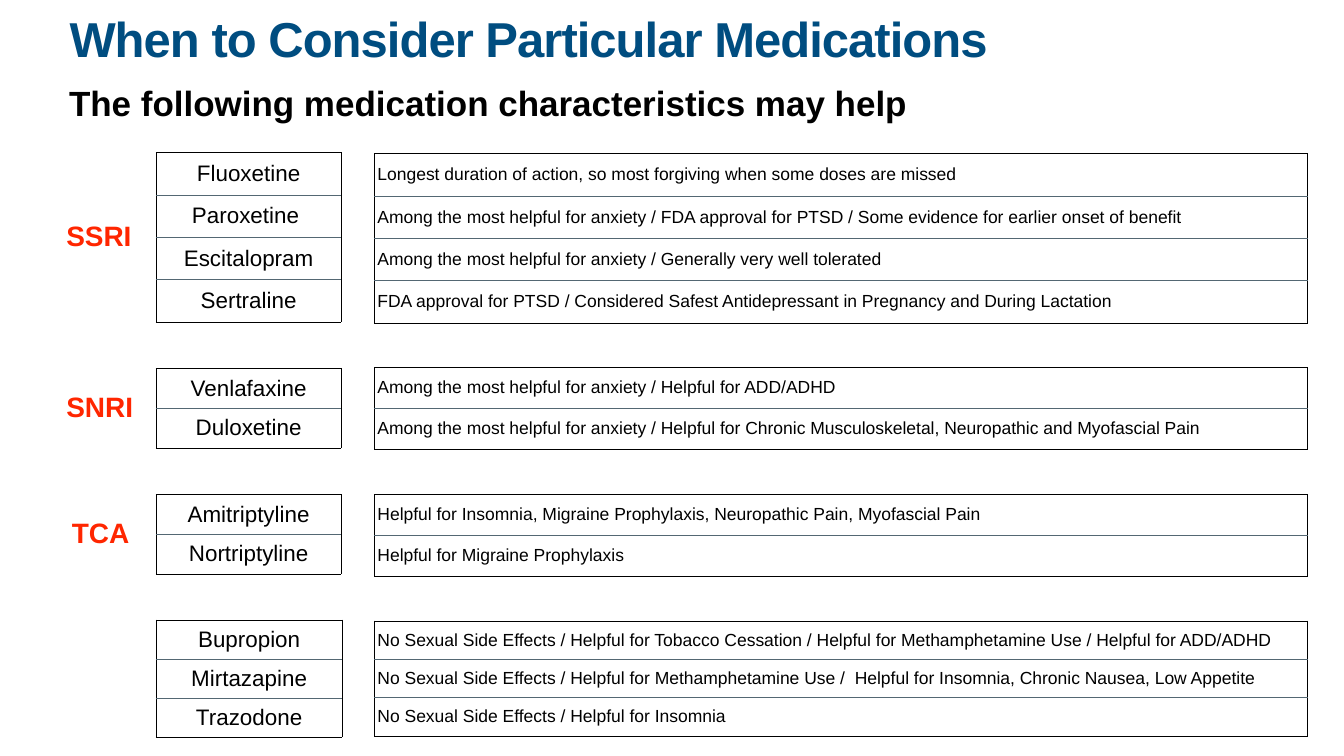
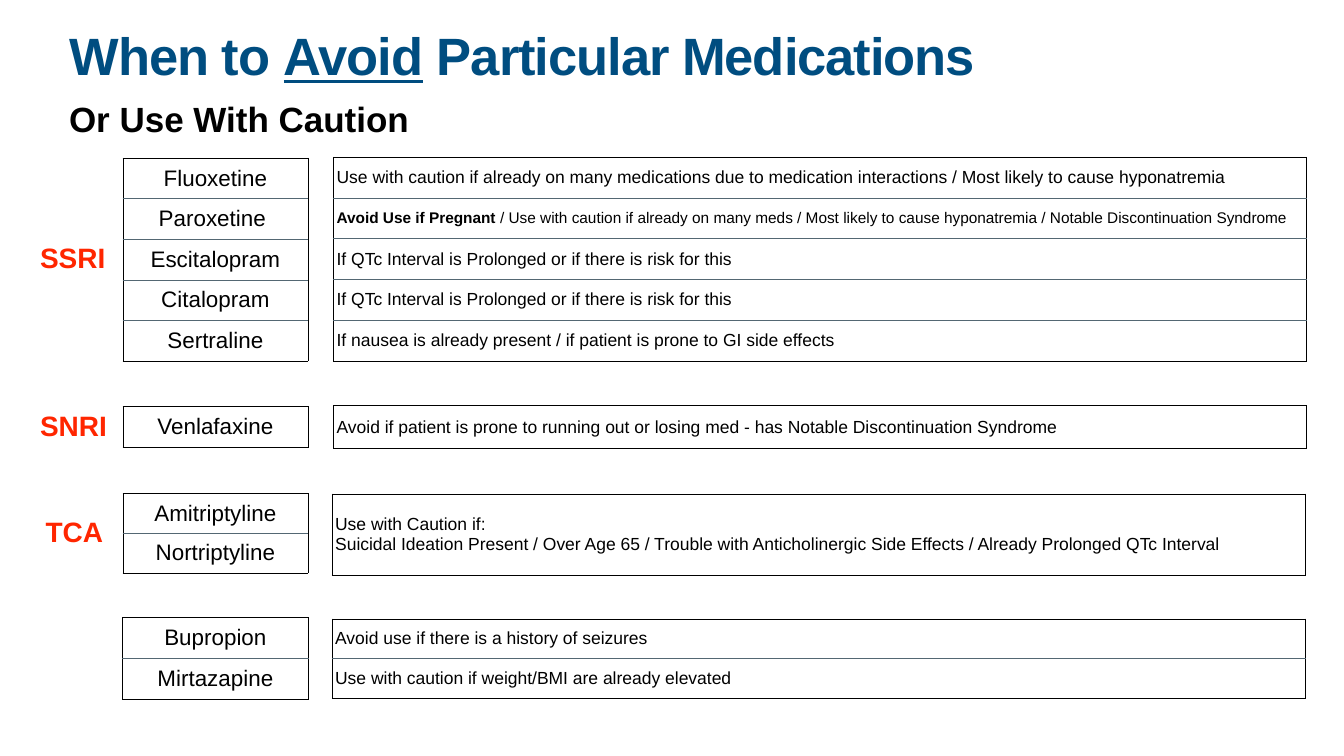
"""Build two slides on when to choose or avoid particular medications."""
from lxml import etree
from pptx import Presentation
from pptx.dml.color import RGBColor
from pptx.enum.text import MSO_ANCHOR, PP_ALIGN
from pptx.oxml.ns import qn
from pptx.util import Emu, Pt

TOP, MID = MSO_ANCHOR.TOP, MSO_ANCHOR.MIDDLE
LEFT, MIDST = PP_ALIGN.LEFT, PP_ALIGN.CENTER
PX = 9144
WIDE, HIGH = 2667, 1500
FONT = "Arial"
BLUE, RED, BLACK, GREY = "004D80", "FF2600", "000000", "536773"
PAD = 6
HEAD_X, HEAD_W = 132, 2403
TAG_H = 81
ANX = "Among the most helpful for anxiety / "
SEX = "No Sexual Side Effects / "
QTC = "If QTc Interval is Prolonged or if there is risk for this"

SLIDES = [
    {
        "title": ["When to Consider Particular Medications"],
        "size": 70, "top": 33, "high": 157,
        "sub": "The following medication characteristics may help", "sub_top": 152,
        "axis": 210,
        "groups": [
            {"tag": "SSRI", "tag_w": 169,
             "drugs": ["Fluoxetine", "Paroxetine ", "Escitalopram", "Sertraline"],
             "drug_box": (310, 303, 367, 336),
             "notes": [
                 "Longest duration of action, so most forgiving when some doses are missed",
                 ANX + "FDA approval for PTSD / Some evidence for earlier onset of benefit",
                 ANX + "Generally very well tolerated",
                 "FDA approval for PTSD / Considered Safest Antidepressant in Pregnancy"
                 " and During Lactation"],
             "note_box": (743, 305, 1852, 336)},
            {"tag": "SNRI", "tag_w": 169,
             "drugs": ["Venlafaxine", "Duloxetine"],
             "drug_box": (310, 731, 367, 158),
             "notes": [
                 ANX + "Helpful for ADD/ADHD",
                 ANX + "Helpful for Chronic Musculoskeletal, Neuropathic and Myofascial Pain"],
             "note_box": (743, 729, 1852, 162)},
            {"tag": "TCA", "tag_w": 147,
             "drugs": ["Amitriptyline", "Nortriptyline"],
             "drug_box": (310, 981, 367, 158),
             "notes": [
                 "Helpful for Insomnia, Migraine Prophylaxis, Neuropathic Pain, Myofascial Pain",
                 "Helpful for Migraine Prophylaxis"],
             "note_box": (743, 981, 1852, 162)},
            {"drugs": ["Bupropion", "Mirtazapine", "Trazodone"],
             "drug_box": (310, 1230, 369, 232),
             "notes": [
                 SEX + "Helpful for Tobacco Cessation / Helpful for Methamphetamine Use"
                 " / Helpful for ADD/ADHD",
                 SEX + "Helpful for Methamphetamine Use /  Helpful for Insomnia,"
                 " Chronic Nausea, Low Appetite",
                 SEX + "Helpful for Insomnia"],
             "note_box": (743, 1232, 1852, 228)},
        ],
    },
    {
        "title": ["When to ", ("Avoid", {"line": True}), " Particular Medications"],
        "size": 75, "top": 64, "high": 146,
        "sub": "Or Use With Caution", "sub_top": 184,
        "axis": 158,
        "groups": [
            {"tag": "SSRI", "tag_w": 169,
             "drugs": ["Fluoxetine", "Paroxetine ", "Escitalopram", "Citalopram", "Sertraline"],
             "drug_box": (244, 314, 367, 402),
             "notes": [
                 "Use with caution if already on many medications due to medication"
                 " interactions / Most likely to cause hyponatremia",
                 [("Avoid Use if Pregnant", {"size": 22, "bold": True}),
                  (" / Use with caution if already on many meds / Most likely to cause"
                   " hyponatremia / Notable Discontinuation Syndrome", {"size": 22})],
                 QTC,
                 QTC,
                 "If nausea is already present / if patient is prone to GI side effects"],
             "note_box": (662, 312, 1930, 404)},
            {"tag": "SNRI", "tag_w": 169,
             "drugs": ["Venlafaxine"],
             "drug_box": (244, 807, 367, 81),
             "notes": [
                 "Avoid if patient is prone to running out or losing med"
                 " - has Notable Discontinuation Syndrome"],
             "note_box": (662, 805, 1930, 85)},
            {"tag": "TCA", "tag_w": 147,
             "drugs": ["Amitriptyline", "Nortriptyline"],
             "drug_box": (244, 979, 367, 158),
             "notes": [
                 "Use with Caution if:\nSuicidal Ideation Present / Over Age 65 / Trouble with"
                 " Anticholinergic Side Effects / Already Prolonged QTc Interval"],
             "note_box": (659, 980, 1932, 161)},
            {"drugs": ["Bupropion", "Mirtazapine"],
             "drug_box": (243, 1225, 369, 162),
             "notes": [
                 "Avoid use if there is a history of seizures",
                 "Use with caution if weight/BMI are already elevated"],
             "note_box": (659, 1228, 1932, 157)},
        ],
    },
]


def px(num):
    return Emu(round(num * PX))


def rgb(code):
    return RGBColor.from_string(code)


def add_run(para, text, size, color=BLACK, bold=False, line=False, track=0):
    run = para.add_run()
    run.text = text
    font = run.font
    font.name, font.size, font.bold = FONT, Pt(size), bold
    font.color.rgb = rgb(color)
    if line:
        font.underline = True
    if track:
        run._r.get_or_add_rPr().set("spc", str(track))


def fill_para(para, parts, **base):
    for part in [parts] if isinstance(parts, str) else parts:
        text, extra = (part, {}) if isinstance(part, str) else part
        for num, row in enumerate(text.split("\n")):
            if num:
                para.add_line_break()
            add_run(para, row, **{**base, **extra})


def add_text(slide, box, parts, anchor, pad=PAD, space=None, wrap=True, **base):
    frame = slide.shapes.add_textbox(*map(px, box)).text_frame
    frame.word_wrap = wrap
    frame.vertical_anchor = anchor
    frame.margin_left = frame.margin_right = px(pad)
    frame.margin_top = frame.margin_bottom = px(pad)
    para = frame.paragraphs[0]
    para.alignment = LEFT
    if space:
        para.line_spacing = space
    fill_para(para, parts, **base)


def add_edge(cell, side, color):
    edge = etree.SubElement(cell._tc.get_or_add_tcPr(), qn("a:ln" + side), w=str(Pt(1)))
    fill = etree.SubElement(edge, qn("a:solidFill"))
    etree.SubElement(fill, qn("a:srgbClr"), val=color)


def add_grid(slide, box, rows, size, align):
    count = len(rows)
    table = slide.shapes.add_table(count, 1, *map(px, box)).table
    table.first_row = table.horz_banding = False
    for num, parts in enumerate(rows):
        table.rows[num].height = px(box[3] / count)
        cell = table.cell(num, 0)
        cell.margin_left = cell.margin_right = px(PAD)
        cell.margin_top = cell.margin_bottom = px(PAD)
        cell.vertical_anchor = MID
        add_edge(cell, "L", BLACK)
        add_edge(cell, "R", BLACK)
        add_edge(cell, "T", GREY if num else BLACK)
        add_edge(cell, "B", GREY if num < count - 1 else BLACK)
        cell.fill.background()
        para = cell.text_frame.paragraphs[0]
        para.alignment = align
        fill_para(para, parts, size=size)


def add_group(slide, group, axis):
    add_grid(slide, group["drug_box"], group["drugs"], 32, MIDST)
    add_grid(slide, group["note_box"], group["notes"], 25, LEFT)
    if "tag" in group:
        _, top, _, high = group["drug_box"]
        wide = group["tag_w"]
        box = (axis - wide / 2, top + (high - TAG_H) / 2, wide, TAG_H)
        add_text(slide, box, group["tag"], MID, space=0.9, wrap=False,
                 size=40, color=RED, bold=True)


def add_page(deck, page):
    slide = deck.slides.add_slide(deck.slide_layouts[6])
    size = page["size"]
    add_text(slide, (HEAD_X, page["top"], HEAD_W, page["high"]), page["title"], TOP,
             space=0.8, size=size, color=BLUE, bold=True, track=-2 * size)
    add_text(slide, (HEAD_X, page["sub_top"], HEAD_W, 102), page["sub"], MID,
             pad=5, size=50, bold=True)
    for group in page["groups"]:
        add_group(slide, group, page["axis"])


def main():
    deck = Presentation()
    deck.slide_width, deck.slide_height = px(WIDE), px(HIGH)
    for page in SLIDES:
        add_page(deck, page)
    deck.save("out.pptx")


if __name__ == "__main__":
    main()
